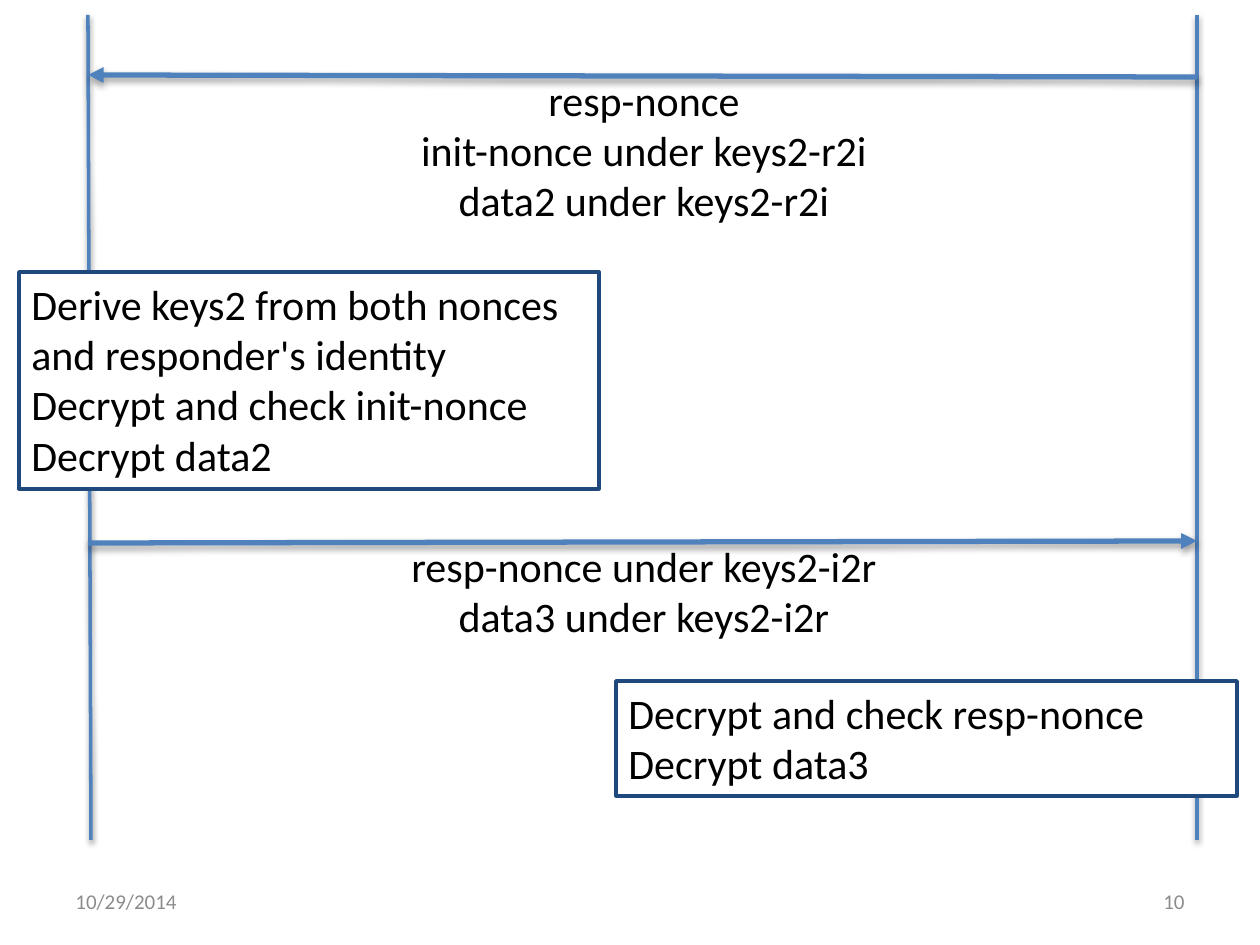
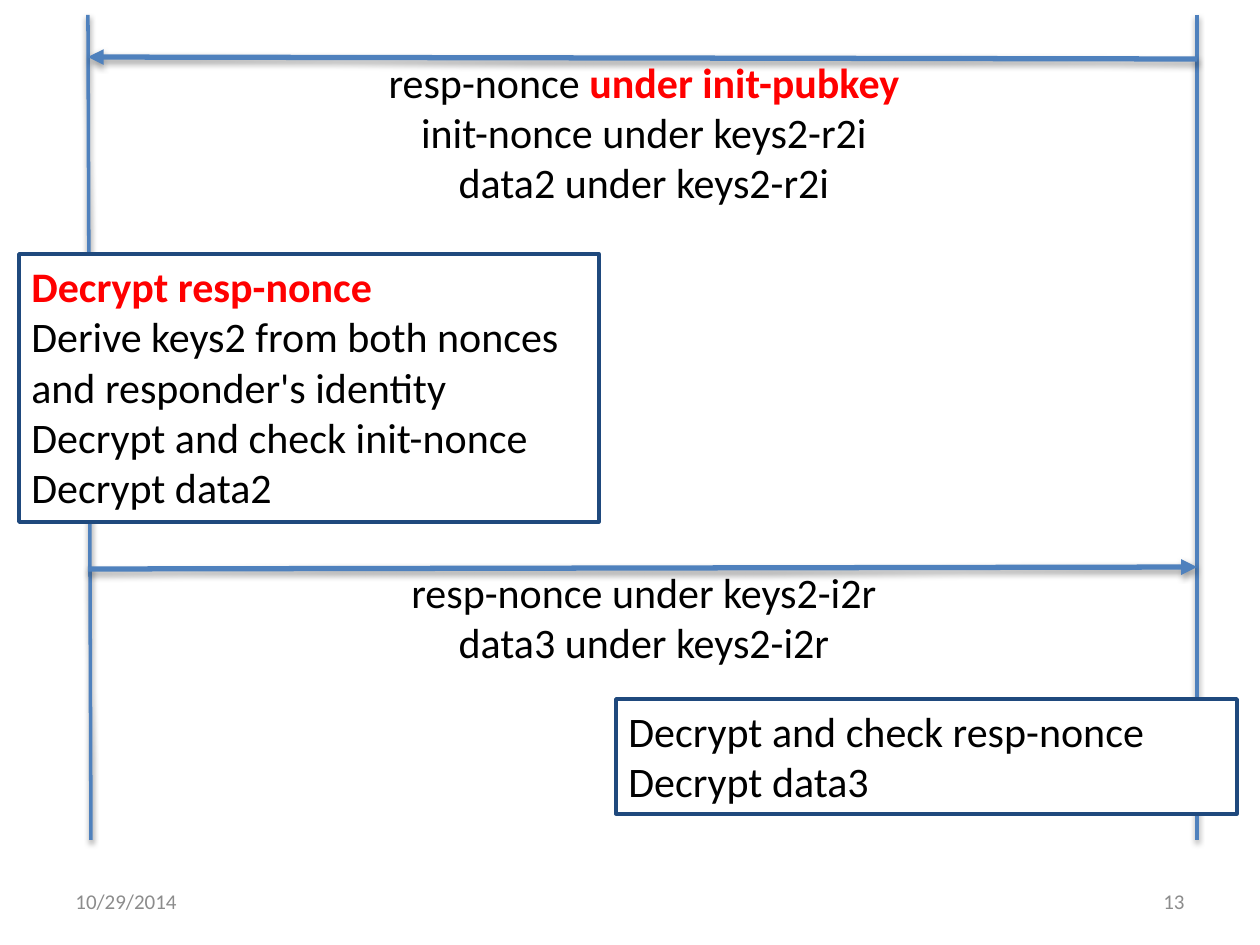
from lxml.etree import SubElement
from pptx import Presentation
from pptx.dml.color import RGBColor
from pptx.enum.shapes import MSO_CONNECTOR as Connector, MSO_SHAPE as Shape
from pptx.enum.text import MSO_ANCHOR as Anchor, MSO_AUTO_SIZE as AutoSize, PP_ALIGN as Align
from pptx.oxml.ns import qn
from pptx.util import Emu, Pt

PX_PER_INCH = 126
FONT = "Calibri"
BLACK = RGBColor(0x00, 0x00, 0x00)
WHITE = RGBColor(0xFF, 0xFF, 0xFF)
RED = RGBColor(0xFF, 0x00, 0x00)
GREY = RGBColor(0x8C, 0x8C, 0x8C)
BLUE = RGBColor(0x4F, 0x81, 0xBD)
NAVY = RGBColor(0x1F, 0x49, 0x7D)

INITIATOR_X, RESPONDER_X = 88, 1197
LIFELINE_TOP, LIFELINE_BOTTOM = 15, 840
INITIATOR_BOX = (19, 580)
RESPONDER_BOX = (616, 621)
FOOTER_TOP, FOOTER_WIDTH, FOOTER_HEIGHT = 876, 294, 50
DATE = "10/29/2014"

DERIVE_LINES = [
    "Derive keys2 from both nonces",
    "and responder's identity",
    "Decrypt and check init-nonce",
    "Decrypt data2",
]
REPLY_LINES = ["init-nonce under keys2-r2i", "data2 under keys2-r2i"]
CONFIRM_LINES = ["resp-nonce under keys2-i2r", "data3 under keys2-i2r"]
CHECK_LINES = ["Decrypt and check resp-nonce", "Decrypt data3"]


def px(length):
    return Emu(round(length * 914400 / PX_PER_INCH))


def text_height(lines):
    return 51 * len(lines) + 13


def write_lines(box, lines, size=24, color=BLACK, align=Align.LEFT):
    """Text after a | is stressed in bold red."""
    frame = box.text_frame
    frame.word_wrap = True
    frame.text = "\n".join(lines)
    for para, line in zip(frame.paragraphs, lines):
        plain, _, stressed = line.partition("|")
        para.text = plain
        para.alignment = align
        if stressed:
            para.add_run().text = stressed
        for span in para.runs:
            is_stressed = span.text == stressed
            span.font.name = FONT
            span.font.size = Pt(size)
            span.font.bold = is_stressed
            span.font.color.rgb = RED if is_stressed else color


def add_line(page, start, end, width, arrow=False):
    line = page.shapes.add_connector(
        Connector.STRAIGHT, *[px(value) for value in (*start, *end)])
    line.line.color.rgb = BLUE
    line.line.width = Pt(width)
    properties = line._element.spPr
    if arrow:
        SubElement(properties.find(qn("a:ln")), qn("a:tailEnd"), type="triangle")
    effects = SubElement(properties, qn("a:effectLst"))
    shadow = SubElement(effects, qn("a:outerShdw"), blurRad="40000", dist="20000",
                        dir="5400000", rotWithShape="0")
    shade = SubElement(shadow, qn("a:srgbClr"), val=str(BLACK))
    SubElement(shade, qn("a:alpha"), val="38000")


def add_lifelines(page):
    add_line(page, (INITIATOR_X, LIFELINE_TOP), (INITIATOR_X + 3, LIFELINE_BOTTOM), 2)
    add_line(page, (RESPONDER_X, LIFELINE_TOP), (RESPONDER_X, LIFELINE_BOTTOM), 2)


def add_message(page, top, lines, sender_x, receiver_x):
    add_line(page, (sender_x, top + 9), (receiver_x, top + 7), 3, arrow=True)
    label = page.shapes.add_textbox(
        px(91), px(top), px(RESPONDER_X - 91), px(text_height(lines)))
    write_lines(label, lines, align=Align.CENTER)
    label.text_frame.auto_size = AutoSize.SHAPE_TO_FIT_TEXT


def add_step(page, top, lines, column):
    left, width = column
    box = page.shapes.add_shape(
        Shape.RECTANGLE, px(left), px(top), px(width), px(text_height(lines)))
    box.shadow.inherit = False
    box.fill.solid()
    box.fill.fore_color.rgb = WHITE
    box.line.color.rgb = NAVY
    box.line.width = Pt(2)
    write_lines(box, lines)
    box.text_frame.vertical_anchor = Anchor.TOP
    box.text_frame.auto_size = AutoSize.SHAPE_TO_FIT_TEXT


def add_footer(page, number):
    for left, text, align in ((63, DATE, Align.LEFT), (903, number, Align.RIGHT)):
        box = page.shapes.add_textbox(
            px(left), px(FOOTER_TOP), px(FOOTER_WIDTH), px(FOOTER_HEIGHT))
        write_lines(box, [text], 12, GREY, align)
        box.text_frame.vertical_anchor = Anchor.MIDDLE


def add_exchange(deck, number, tops, reply, derive):
    reply_top, derive_top, confirm_top, check_top = tops
    page = deck.slides.add_slide(deck.slide_layouts[6])
    add_lifelines(page)
    add_message(page, confirm_top, CONFIRM_LINES, INITIATOR_X, RESPONDER_X)
    add_step(page, derive_top, derive, INITIATOR_BOX)
    add_step(page, check_top, CHECK_LINES, RESPONDER_BOX)
    add_message(page, reply_top, reply, RESPONDER_X, INITIATOR_X)
    add_footer(page, number)


def main():
    deck = Presentation()
    deck.slide_width, deck.slide_height = px(1260), px(945)
    add_exchange(deck, "10", (68, 272, 534, 681),
                 ["resp-nonce", *REPLY_LINES], DERIVE_LINES)
    add_exchange(deck, "13", (50, 254, 560, 699),
                 ["resp-nonce |under init-pubkey", *REPLY_LINES],
                 ["|Decrypt resp-nonce", *DERIVE_LINES])
    deck.save("out.pptx")


if __name__ == "__main__":
    main()
